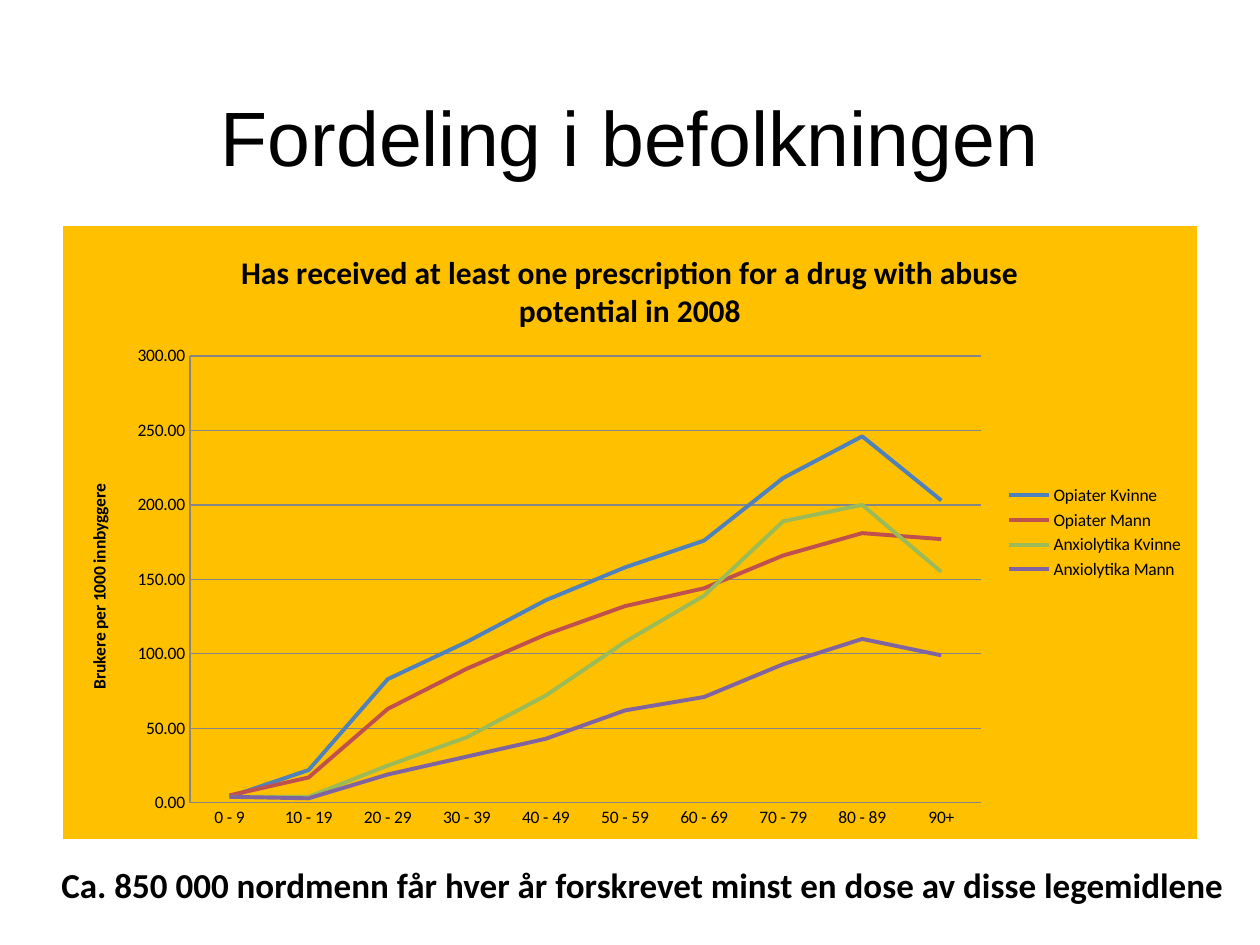
from dataclasses import dataclass

from lxml import etree
from pptx import Presentation
from pptx.chart.data import CategoryChartData
from pptx.dml.color import RGBColor
from pptx.enum.chart import XL_CHART_TYPE, XL_LEGEND_POSITION, XL_MARKER_STYLE, XL_TICK_MARK
from pptx.enum.text import MSO_ANCHOR, MSO_AUTO_SIZE, PP_ALIGN
from pptx.oxml import parse_xml
from pptx.oxml.ns import nsdecls, qn
from pptx.util import Pt

LINE = XL_CHART_TYPE.LINE
RIGHT = XL_LEGEND_POSITION.RIGHT
NO_MARKER = XL_MARKER_STYLE.NONE
NO_TICK = XL_TICK_MARK.NONE
MIDDLE = MSO_ANCHOR.MIDDLE
FIT_SHAPE = MSO_AUTO_SIZE.SHAPE_TO_FIT_TEXT
CENTER, LEFT = PP_ALIGN.CENTER, PP_ALIGN.LEFT

PX_PER_INCH = 126

AGES = [f"{low} - {low + 9}" for low in range(0, 90, 10)] + ["90+"]
USERS = {
    "Opiater Kvinne": (4, 22, 83, 108, 136, 158, 176, 218, 246, 203),
    "Opiater Mann": (5, 17, 63, 90, 113, 132, 144, 166, 181, 177),
    "Anxiolytika Kvinne": (4, 4, 25, 44, 72, 108, 139, 189, 200, 155),
    "Anxiolytika Mann": (4, 3, 19, 31, 43, 62, 71, 93, 110, 99),
}


@dataclass(frozen=True)
class Theme:
    text: str = "000000"
    panel: str = "FFC000"
    grid: str = "868686"
    series: tuple = ("4F81BD", "C0504D", "9BBB59", "8064A2")
    title_font: str = "Arial"
    body_font: str = "Calibri"
    title_size: int = 44
    note_size: int = 20
    chart_title_size: int = 18
    label_size: int = 10


def px(n):
    return round(n * 914400 / PX_PER_INCH)


class SlideBuilder:
    def __init__(self, prs, theme):
        self.theme = theme
        self.s = prs.slides.add_slide(prs.slide_layouts[6])

    def style(self, font, size, name, bold=False):
        font.size, font.name, font.bold = Pt(size), name, bold
        font.color.rgb = RGBColor.from_string(self.theme.text)

    def text(self, box, text, size, name, bold=False, align=LEFT, grow=False):
        tf = self.s.shapes.add_textbox(*map(px, box)).text_frame
        tf.word_wrap = not grow
        if grow:
            tf.auto_size = FIT_SHAPE
        else:
            tf.vertical_anchor = MIDDLE
        tf.text = text
        p = tf.paragraphs[0]
        p.alignment = align
        self.style(p.runs[0].font, size, name, bold)

    def chart_text(self, holder, text, size):
        """Give a chart or an axis a bold title."""
        holder.has_title = True
        tf = holder.chart_title.text_frame if hasattr(holder, "chart_title") else holder.axis_title.text_frame
        tf.text = text
        self.style(tf.paragraphs[0].runs[0].font, size, self.theme.body_font, True)

    def line_chart(self, box, plot, title, value_title, cats, series):
        t = self.theme
        data = CategoryChartData(number_format="0.00")
        data.categories = cats
        for name, values in series.items():
            data.add_series(name, values)
        chart = self.s.shapes.add_chart(LINE, *map(px, box), data).chart
        self.style(chart.font, t.label_size, t.body_font)
        self.chart_text(chart, title, t.chart_title_size)
        self.chart_text(chart.value_axis, value_title, t.label_size)

        chart.has_legend = True
        chart.legend.position = RIGHT
        chart.legend.include_in_layout = False
        for ser, color in zip(chart.plots[0].series, t.series):
            ser.smooth = False
            ser.marker.style = NO_MARKER
            self.line(ser.format.line, color, 2.25)
        chart.plots[0].vary_by_categories = False

        values = chart.value_axis
        values.minimum_scale, values.maximum_scale, values.major_unit = 0, 300, 50
        values.has_major_gridlines = True
        values.tick_labels.number_format = "0.00"
        values.tick_labels.number_format_is_linked = False
        self.line(values.major_gridlines.format.line, t.grid, 0.75)
        for axis in (values, chart.category_axis):
            axis.major_tick_mark = axis.minor_tick_mark = NO_TICK
            self.line(axis.format.line, t.grid, 0.75)

        self.chart_fill(chart, t.panel)
        self.plot_layout(chart, box, plot)

    def line(self, line, color, width):
        line.color.rgb = RGBColor.from_string(color)
        line.width = Pt(width)

    def chart_fill(self, chart, color):
        root = chart.element
        root.find(qn("c:chart")).addnext(parse_xml(
            f'<c:spPr {nsdecls("c", "a")}><a:solidFill><a:srgbClr val="{color}"/></a:solidFill>'
            '<a:ln><a:noFill/></a:ln></c:spPr>'))

    def plot_layout(self, chart, box, plot):
        """Place the inner plot area, given in slide px, as shares of the chart."""
        area = chart.element.find(qn("c:chart")).find(qn("c:plotArea"))
        for old in area.findall(qn("c:layout")):
            area.remove(old)
        left, top, width, height = box
        shares = {"x": (plot[0] - left) / width, "y": (plot[1] - top) / height,
                  "w": plot[2] / width, "h": plot[3] / height}
        layout = parse_xml(f'<c:layout {nsdecls("c")}><c:manualLayout/></c:layout>')
        settings = {"layoutTarget": "inner", "xMode": "edge", "yMode": "edge", **shares}
        for tag, value in settings.items():
            etree.SubElement(layout[0], qn(f"c:{tag}")).set("val", str(value))
        area.insert(0, layout)


def main():
    theme = Theme()
    prs = Presentation()
    prs.slide_width, prs.slide_height = px(1260), px(945)
    slide = SlideBuilder(prs, theme)
    slide.text((63, 57, 1134, 157), "Fordeling i befolkningen",
               theme.title_size, theme.title_font, align=CENTER)
    slide.line_chart((63, 226, 1134, 613), (190, 356, 791, 447),
                     "Has received at least one prescription for a drug with abuse potential in 2008",
                     "Brukere per 1000 innbyggere", AGES, USERS)
    slide.text((49, 857, 1198, 55),
               "Ca. 850 000 nordmenn får hver år forskrevet minst en dose av disse legemidlene",
               theme.note_size, theme.body_font, bold=True, grow=True)
    prs.save("out.pptx")


if __name__ == "__main__":
    main()
